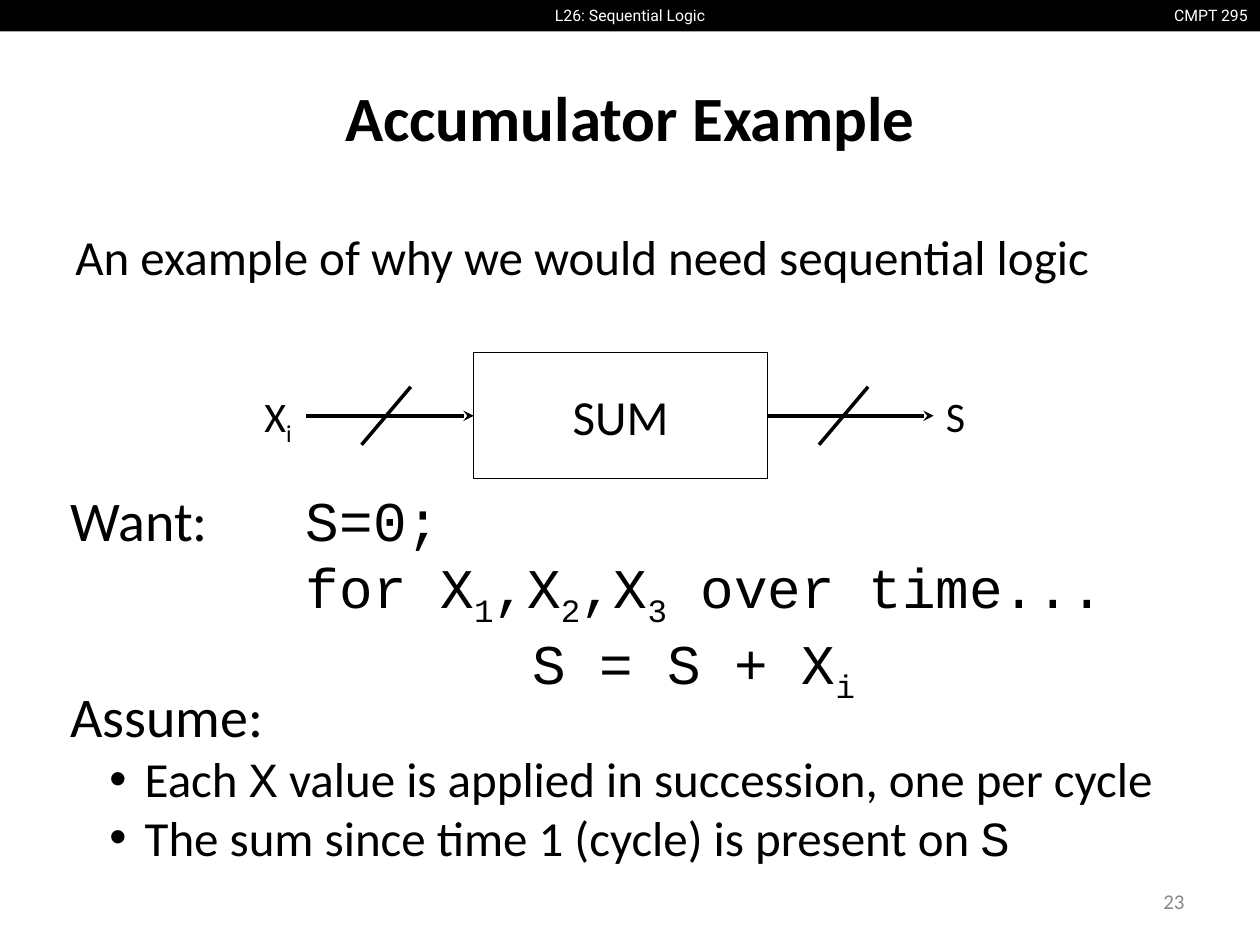
from lxml import etree
from pptx import Presentation
from pptx.dml.color import RGBColor
from pptx.enum.shapes import MSO_CONNECTOR, MSO_SHAPE
from pptx.enum.text import MSO_ANCHOR, PP_ALIGN
from pptx.oxml.ns import qn
from pptx.util import Inches, Pt

LEFT, CENTER, RIGHT = PP_ALIGN.LEFT, PP_ALIGN.CENTER, PP_ALIGN.RIGHT
TOP, MIDDLE = MSO_ANCHOR.TOP, MSO_ANCHOR.MIDDLE
RECTANGLE, STRAIGHT = MSO_SHAPE.RECTANGLE, MSO_CONNECTOR.STRAIGHT
BODY, CODE, HEADER = "Calibri", "Courier New", "Roboto"
BLACK, WHITE, GRAY = "000000", "FFFFFF", "888888"


def rgb(value):
    return RGBColor.from_string(value)


def write(shape, lines, size, color=BLACK, align=LEFT, anchor=TOP, bold=False):
    frame = shape.text_frame
    frame.word_wrap = True
    frame.vertical_anchor = anchor
    for index, parts in enumerate(lines):
        paragraph = frame.add_paragraph() if index else frame.paragraphs[0]
        paragraph.alignment = align
        for content, family, subscript in parts:
            run = paragraph.add_run()
            run.text = content
            run.font.name = family
            run.font.size = Pt(size)
            run.font.bold = bold
            run.font.color.rgb = rgb(color)
            if subscript:
                run.font._element.set("baseline", "-25000")
    return frame


deck = Presentation()
deck.slide_width, deck.slide_height = Inches(10), Inches(7.5)
slide = deck.slides.add_slide(deck.slide_layouts[6])
shapes = slide.shapes

header_bar = shapes.add_shape(RECTANGLE, 0, 0, Inches(10), Inches(0.25))
sum_block = shapes.add_shape(RECTANGLE, Inches(3.76), Inches(2.8), Inches(2.33), Inches(1))
for block, fill in ((header_bar, BLACK), (sum_block, WHITE)):
    block.shadow.inherit = False
    block.fill.solid()
    block.fill.fore_color.rgb = rgb(fill)
header_bar.line.fill.background()
sum_block.line.color.rgb = rgb(BLACK)
sum_block.line.width = Pt(0.75)
write(sum_block, [[("SUM", BODY, False)]], 28, align=CENTER, anchor=MIDDLE)

labels = [
    ("CMPT 295", HEADER, 9, WHITE, RIGHT, TOP, False, (9.19, 0, 0.81, 0.25)),
    ("L26: Sequential Logic", HEADER, 9, WHITE, CENTER, TOP, False, (4.07, 0, 1.86, 0.25)),
    ("Accumulator Example", BODY, 36, BLACK, CENTER, MIDDLE, True, (0.5, 0.3, 9, 1.25)),
    ("An example of why we would need sequential logic", BODY, 28, BLACK, LEFT, TOP, False,
     (0.5, 1.75, 9, 1.5)),
    ("S", BODY, 24, BLACK, LEFT, TOP, False, (7.41, 3.05, 0.36, 0.5)),
    ("23", BODY, 12, GRAY, RIGHT, MIDDLE, False, (7.17, 6.95, 2.33, 0.4)),
]
for content, family, size, color, align, anchor, bold, box in labels:
    label = shapes.add_textbox(*map(Inches, box))
    frame = write(label, [[(content, family, False)]], size, color, align, anchor, bold)
    frame.word_wrap = family != HEADER

input_label = shapes.add_textbox(Inches(2), Inches(3.05), Inches(0.43), Inches(0.5))
write(input_label, [[("X", BODY, False), ("i", BODY, True)]], 24)

wires = [
    (2.43, 3.3, 3.76, 3.3, True),
    (6.09, 3.3, 7.41, 3.3, True),
    (2.87, 3.53, 3.26, 3.07, False),
    (6.5, 3.53, 6.89, 3.07, False),
]
for *ends, has_arrow in wires:
    wire = shapes.add_connector(STRAIGHT, *map(Inches, ends))
    wire.line.color.rgb = rgb(BLACK)
    wire.line.width = Pt(2)
    if has_arrow:
        etree.SubElement(wire.line._get_or_add_ln(), qn("a:tailEnd"), type="stealth")
    etree.SubElement(wire._element.spPr, qn("a:effectLst"))

algorithm = shapes.add_textbox(Inches(0.46), Inches(3.8), Inches(8.83), Inches(1.72))
loop_line = [("for X", CODE, False)]
for number, following in (("1", ",X"), ("2", ",X"), ("3", " over time...")):
    loop_line += [(number, CODE, True), (following, CODE, False)]
algorithm_frame = write(algorithm, [
    [("Want:\t", BODY, False), ("S=0;", CODE, False)],
    loop_line,
    [("S = S + X", CODE, False), ("i", CODE, True)],
], 32)
code_start = Inches(1.87)
want, loop, update = algorithm_frame.paragraphs
tab_list = etree.SubElement(want._p.get_or_add_pPr(), qn("a:tabLst"))
etree.SubElement(tab_list, qn("a:tab"), pos=str(code_start), algn="l")
for paragraph, margin in ((loop, code_start), (update, Inches(3.67))):
    paragraph._p.get_or_add_pPr().set("marL", str(margin))

assumptions = shapes.add_textbox(Inches(0.46), Inches(5.36), Inches(9.15), Inches(1.59))
assumption_frame = write(assumptions, [
    [("Assume:", BODY, False)],
    [("Each ", BODY, False), ("X", CODE, False),
     (" value is applied in succession, one per cycle", BODY, False)],
    [("The sum since time 1 (cycle) is present on ", BODY, False), ("S", CODE, False)],
], 32)
for paragraph in assumption_frame.paragraphs[1:]:
    paragraph.level = 1
    properties = paragraph._p.get_or_add_pPr()
    properties.set("marL", str(Inches(0.59)))
    properties.set("indent", str(Inches(-0.28)))
    bullet_color = etree.SubElement(properties, qn("a:buClr"))
    etree.SubElement(bullet_color, qn("a:srgbClr"), val=BLACK)
    etree.SubElement(properties, qn("a:buFont"), typeface="Arial")
    etree.SubElement(properties, qn("a:buChar"), char="•")
    for run in paragraph.runs:
        run.font.size = Pt(28)

deck.save("out.pptx")
